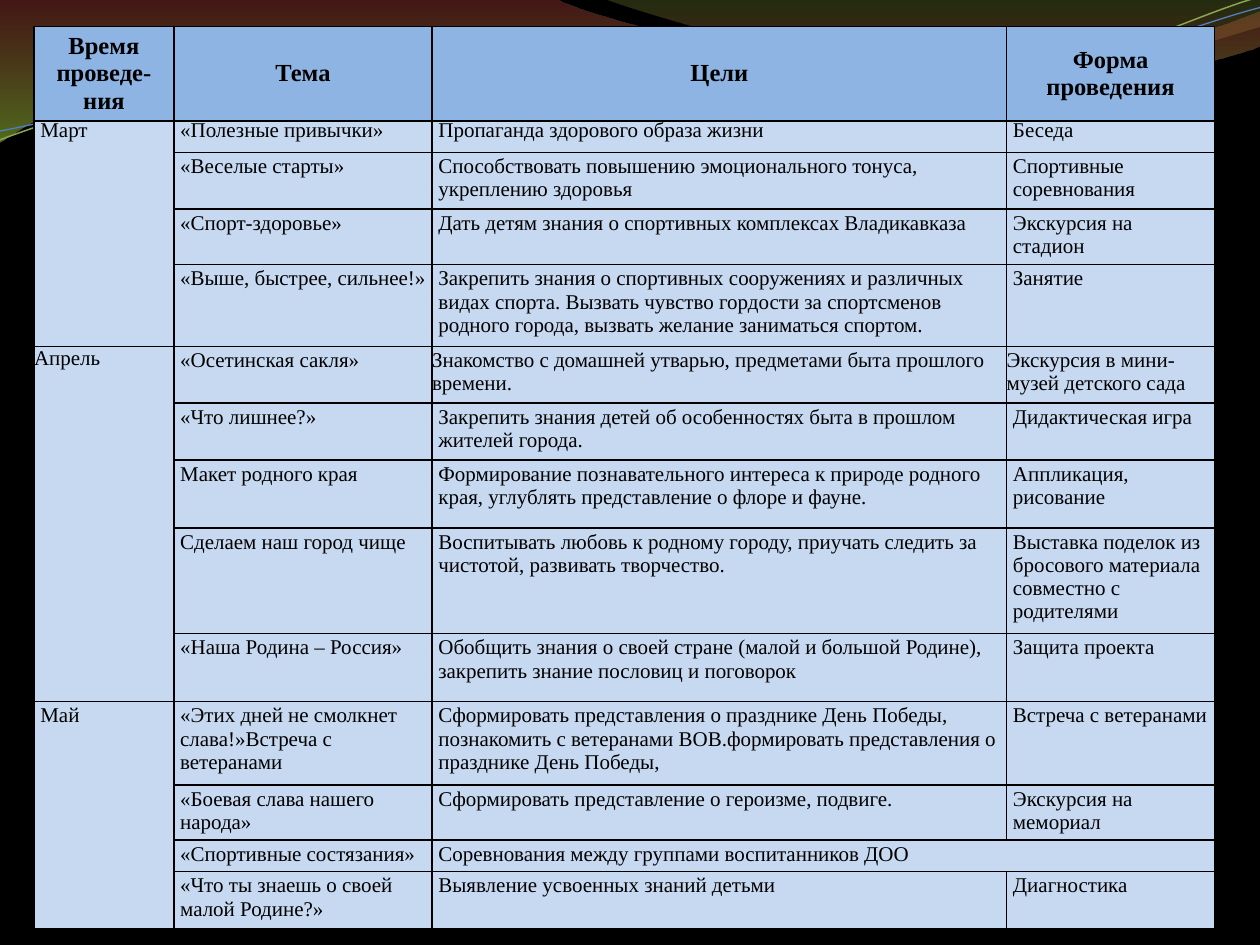
from lxml import etree
from pptx import Presentation
from pptx.dml.color import RGBColor
from pptx.enum.text import MSO_ANCHOR, PP_ALIGN
from pptx.oxml.ns import qn
from pptx.util import Inches, Pt

MIDDLE, TOP = MSO_ANCHOR.MIDDLE, MSO_ANCHOR.TOP
CENTER, LEFT = PP_ALIGN.CENTER, PP_ALIGN.LEFT

BLACK = RGBColor(0x00, 0x00, 0x00)
HEADER_BLUE = RGBColor(0x8E, 0xB4, 0xE3)
BODY_BLUE = RGBColor(0xC6, 0xD9, 0xF1)
RED = RGBColor(0x97, 0x33, 0x30)
LIGHT_GREEN = RGBColor(0x95, 0xC2, 0x38)
DARK_GREEN = RGBColor(0x76, 0x95, 0x37)
BRIGHT_RED = RGBColor(0xBE, 0x33, 0x30)
LINE_GREEN = RGBColor(0x89, 0xA5, 0x4F)
LINE_BLUE = RGBColor(0x4F, 0x81, 0xBD)

FONT = "Times New Roman"
TABLE_LEFT = 0.27
COLUMN_WIDTHS = [1.11, 2.05, 4.56, 1.65]
ROW_HEIGHTS = [0.29, 0.45, 0.44, 0.65, 0.45, 0.45, 0.54, 0.84, 0.54, 0.66, 0.44, 0.25, 0.45]

HEADERS = ["Время проведе-ния", "Тема", "Цели", "Форма проведения"]

# Month -> (theme, goals, form of the event)
PLAN = {
    "Март": [
        ("«Полезные привычки»", "Пропаганда здорового образа жизни", "Беседа"),
        ("«Веселые старты»",
         "Способствовать повышению эмоционального тонуса, укреплению здоровья",
         "Спортивные соревнования"),
        ("«Спорт-здоровье»", "Дать детям знания о спортивных комплексах Владикавказа",
         "Экскурсия на стадион"),
        ("«Выше, быстрее, сильнее!»",
         "Закрепить знания о спортивных сооружениях и различных видах спорта. Вызвать чувство "
         "гордости за спортсменов родного города, вызвать желание заниматься спортом.",
         "Занятие"),
    ],
    "Апрель": [
        ("«Осетинская сакля»",
         "Знакомство с домашней утварью, предметами быта прошлого времени.",
         "Экскурсия в мини-музей детского сада"),
        ("«Что лишнее?»",
         "Закрепить знания детей об особенностях быта в прошлом жителей города.",
         "Дидактическая игра"),
        ("Макет родного края",
         "Формирование познавательного интереса к природе родного края, углублять "
         "представление о флоре и фауне.",
         "Аппликация, рисование"),
        ("Сделаем наш город чище",
         "Воспитывать любовь к родному городу, приучать следить за чистотой, развивать "
         "творчество.",
         "Выставка поделок из бросового материала совместно с родителями"),
        ("«Наша Родина – Россия»",
         "Обобщить знания о своей стране (малой и большой Родине), закрепить знание пословиц "
         "и поговорок",
         "Защита проекта"),
    ],
    "Май": [
        ("«Этих дней не смолкнет слава!»Встреча с ветеранами",
         "Сформировать представления о празднике День Победы, познакомить с ветеранами "
         "ВОВ.формировать представления о празднике День Победы,",
         "Встреча с ветеранами"),
        ("«Боевая слава нашего народа»", "Сформировать представление о героизме, подвиге.",
         "Экскурсия на мемориал"),
        ("«Спортивные состязания»", "Соревнования между группами воспитанников ДОО", None),
        ("«Что ты знаешь о своей малой Родине?»", "Выявление усвоенных знаний детьми",
         "Диагностика"),
    ],
}
# Insets: left, right, top and bottom
HEADER_INSETS = (0.06, 0.06, 0.03, 0.03)
BODY_INSETS = (0.05, 0.04, 0.02, 0.02)
# Cells whose text touches the border, by row and column
TIGHT_INSETS = {(4, 0): (0, 0, 0, 0), (4, 2): (0, 0, 0.02, 0.02), (4, 3): (0, 0, 0.02, 0.02)}

# Waves: a pair is a straight step, six numbers are a cubic curve
WIDE_WAVE = [(0, -0.01), (4.4, -0.01), (4.76, 0.17, 6.64, 0.63, 7.58, 0.63),
             (8.53, 0.63, 9.58, 0.26, 10, 0.09), (10.01, 0.36),
             (9.83, 0.44, 8.7, 0.76, 7.46, 0.75), (6.22, 0.75, 3.82, 0.28, 2.57, 0.34),
             (1.29, 0.35, 0.46, 0.83, -0.01, 1.13)]
RIGHT_WAVE = [(4.79, -0.01), (5.09, 0.11, 6.82, 0.62, 7.69, 0.65),
              (8.56, 0.69, 9.61, 0.32, 10, 0.21), (10, 0)]
GREEN_CURVE = [(0, 1.11), (0.48, 0.93, 1.58, 0.57, 2.77, 0.52),
               (3.95, 0.47, 5.93, 0.89, 7.13, 0.8), (8.33, 0.71, 9.38, 0.15, 9.98, -0.02)]
BLUE_CURVE = [(0, 1.04), (0.47, 0.96, 1.64, 0.61, 2.83, 0.56),
              (4.03, 0.51, 5.97, 0.83, 7.17, 0.75), (8.36, 0.67, 9.41, 0.21, 10, 0.06)]


def add_outline(slide, steps, close):
    points = [(Inches(step[i]), Inches(step[i + 1]))
              for step in steps for i in range(0, len(step), 2)]
    builder = slide.shapes.build_freeform(*points[0])
    builder.add_line_segments(points[1:], close=close)
    outline = builder.convert_to_shape()
    outline.shadow.inherit = False
    # Join the three points of each cubic step into one Bezier segment
    segments = iter(list(outline.element.iter(qn("a:lnTo"))))
    for step in steps[1:]:
        first = next(segments)
        if len(step) == 6:
            first.tag = qn("a:cubicBezTo")
            for _ in range(2):
                extra = next(segments)
                first.append(extra[0])
                extra.getparent().remove(extra)
    return outline


def add_wave(slide, steps, stops):
    """Add a filled wave; each stop is (position, colour, opacity in percent)."""
    wave = add_outline(slide, steps, True)
    wave.line.fill.background()
    wave.fill.gradient()
    wave.fill.gradient_angle = 270
    for stop, (position, color, _) in zip(wave.fill.gradient_stops, stops):
        stop.position = position
        stop.color.rgb = color
    for rgb, (_, _, opacity) in zip(wave.element.spPr.iter(qn("a:srgbClr")), stops):
        etree.SubElement(rgb, qn("a:alpha"), val=str(opacity * 1000))


def add_curve(slide, steps, color, width):
    curve = add_outline(slide, steps, False)
    curve.fill.background()
    curve.line.color.rgb = color
    curve.line.width = Pt(width)


def add_borders(cell):
    properties = cell._tc.get_or_add_tcPr()
    for side in ("a:lnL", "a:lnR", "a:lnT", "a:lnB"):
        border = etree.SubElement(properties, qn(side), w=str(Pt(1)))
        fill = etree.SubElement(border, qn("a:solidFill"))
        etree.SubElement(fill, qn("a:srgbClr"), val=str(BLACK))


def format_cell(cell, text, fill, size, bold, align, anchor, insets):
    add_borders(cell)
    cell.fill.solid()
    cell.fill.fore_color.rgb = fill
    cell.vertical_anchor = anchor
    cell.margin_left, cell.margin_right, cell.margin_top, cell.margin_bottom = map(Inches, insets)
    cell.text_frame.text = text
    paragraph = cell.text_frame.paragraphs[0]
    paragraph.alignment = align
    for run in paragraph.runs:
        run.font.name, run.font.size, run.font.bold = FONT, Pt(size), bold
        run.font.color.rgb = BLACK


def add_grid(slide, top, row_heights):
    frame = slide.shapes.add_table(
        len(row_heights), len(COLUMN_WIDTHS), Inches(TABLE_LEFT), Inches(top),
        Inches(sum(COLUMN_WIDTHS)), Inches(sum(row_heights)))
    grid = frame.table
    grid.first_row = grid.horz_banding = False
    for column, width in zip(grid.columns, COLUMN_WIDTHS):
        column.width = Inches(width)
    for row, height in zip(grid.rows, row_heights):
        row.height = Inches(height)
    return grid


def add_plan(slide):
    plan = add_grid(slide, 0.92, ROW_HEIGHTS)
    first = 0
    for month, events in PLAN.items():
        for r, event in enumerate(events, first):
            for c, text in enumerate((month if r == first else "", *event)):
                format_cell(plan.cell(r, c), text or "", BODY_BLUE, 12, False, LEFT, TOP,
                            TIGHT_INSETS.get((r, c), BODY_INSETS))
            if event[-1] is None:
                plan.cell(r, 2).merge(plan.cell(r, 3))
        last = first + len(events) - 1
        plan.cell(first, 0).merge(plan.cell(last, 0))
        first = last + 1


def add_header(slide):
    header = add_grid(slide, 0.21, [0.75])
    for c, text in enumerate(HEADERS):
        format_cell(header.cell(0, c), text, HEADER_BLUE, 14, True, CENTER, MIDDLE,
                    HEADER_INSETS)


def main():
    prs = Presentation()
    prs.slide_width, prs.slide_height = Inches(10), Inches(7.5)
    slide = prs.slides.add_slide(prs.slide_layouts[6])
    slide.background.fill.solid()
    slide.background.fill.fore_color.rgb = BLACK

    # Decorative waves along the top
    add_wave(slide, WIDE_WAVE, [(0, RED, 45), (1, LIGHT_GREEN, 55)])
    add_wave(slide, RIGHT_WAVE, [(0, DARK_GREEN, 30), (0.8, BRIGHT_RED, 45)])
    add_curve(slide, GREEN_CURVE, LINE_GREEN, 0.85)
    add_curve(slide, BLUE_CURVE, LINE_BLUE, 0.75)

    # Schedule, with its header row laid over the top edge
    add_plan(slide)
    add_header(slide)
    prs.save("out.pptx")


if __name__ == "__main__":
    main()
